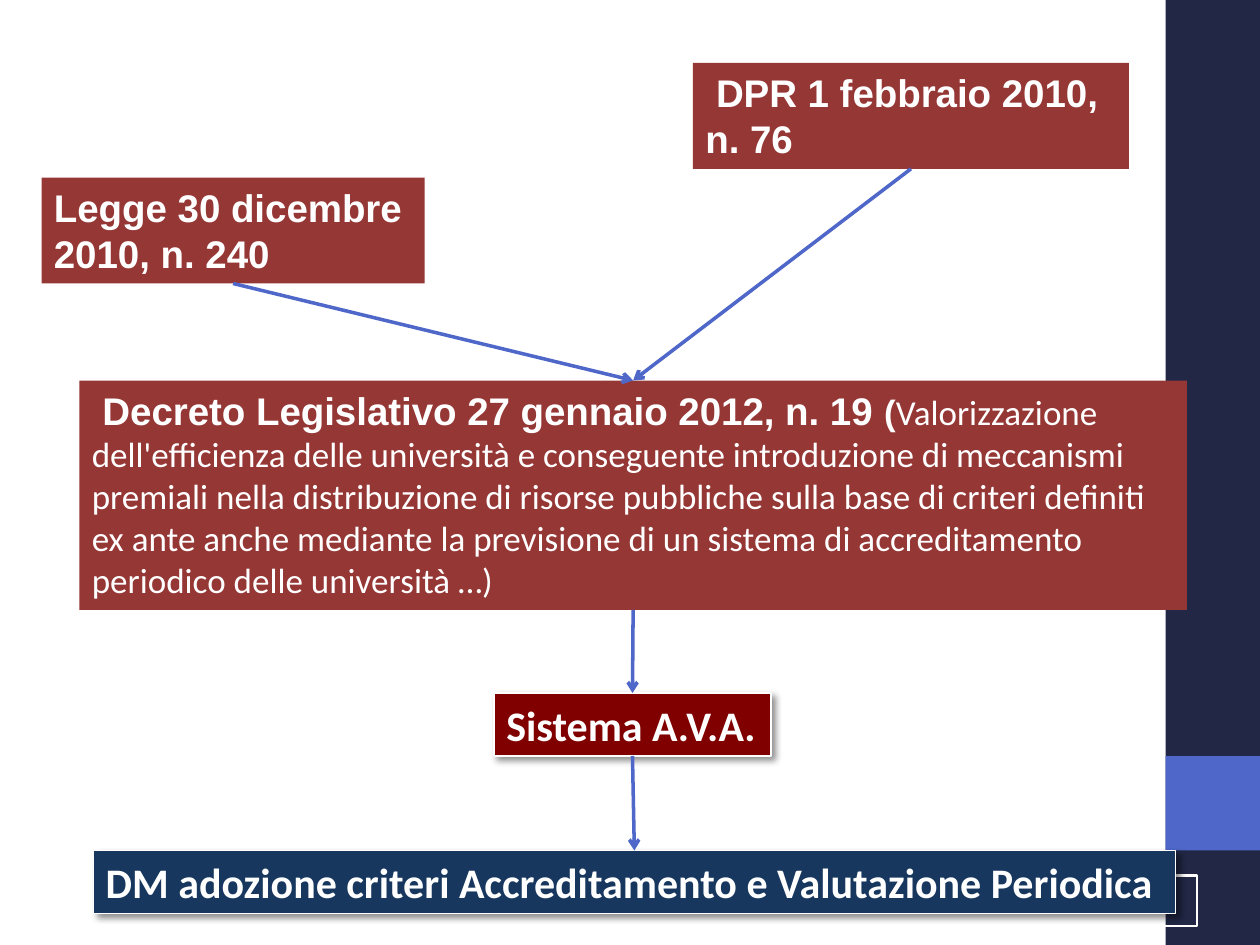
from lxml import etree
from pptx import Presentation
from pptx.dml.color import RGBColor
from pptx.enum.shapes import MSO_CONNECTOR, MSO_SHAPE
from pptx.enum.text import MSO_AUTO_SIZE as AutoSize
from pptx.oxml import parse_xml
from pptx.oxml.ns import nsdecls, qn
from pptx.util import Inches, Pt

WHITE = RGBColor(0xFF, 0xFF, 0xFF)
NAVY = RGBColor(0x21, 0x27, 0x45)
BLUE = RGBColor(0x4E, 0x67, 0xC8)
BRICK = RGBColor(0x95, 0x37, 0x35)
MAROON = RGBColor(0x80, 0x00, 0x00)
DEEP_BLUE = RGBColor(0x17, 0x37, 0x5E)

SLIDE_W, SLIDE_H = 10, 7.5
BAND_W = 0.75

# Runs are (text, font, size, bold); framed boxes have a border and a shadow
BOXES = {
    "decreto": dict(at=(0.63, 3.02, 8.79, 1.82), fill=BRICK, framed=False, runs=[
        (" Decreto Legislativo 27 gennaio 2012, n. 19 ", "Arial", 22, True),
        ("(", "Arial", 20, True),
        ("Valorizzazione dell'efficienza delle università e conseguente "
         "introduzione di meccanismi premiali nella distribuzione di risorse "
         "pubbliche sulla base di criteri definiti ex ante anche mediante la "
         "previsione di un sistema di accreditamento periodico delle "
         "università …)", "Calibri", 20, False)]),
    "sistema": dict(at=(3.92, 5.5, 2.2, 0.5), fill=MAROON, framed=True, runs=[
        ("Sistema A.V.A.", "Calibri", 24, True)]),
    "legge": dict(at=(0.33, 1.41, 3.04, 0.84), fill=BRICK, framed=False, runs=[
        ("Legge 30 dicembre 2010, n. 240", "Arial", 22, True)]),
    "dpr": dict(at=(5.5, 0.5, 3.46, 0.84), fill=BRICK, framed=False, runs=[
        (" DPR 1 febbraio 2010, n. 76", "Arial", 22, True)]),
    "dm": dict(at=(0.74, 6.75, 8.59, 0.5), fill=DEEP_BLUE, framed=True, runs=[
        ("DM adozione criteri Accreditamento e Valutazione Periodica",
         "Calibri", 24, True)]),
}
FLOW = [("dpr", "decreto"), ("legge", "decreto"),
        ("decreto", "sistema"), ("sistema", "dm")]
BOTTOM, TOP = 2, 0

SHADOW = (f'<a:effectLst {nsdecls("a")}><a:outerShdw blurRad="{Pt(4)}" '
          f'dist="{Pt(3)}" dir="2700000" algn="tl" rotWithShape="0">'
          '<a:srgbClr val="000000"><a:alpha val="43000"/></a:srgbClr>'
          '</a:outerShdw></a:effectLst>')


def add_rect(slide, at, fill=None, line=None):
    rect = slide.shapes.add_shape(MSO_SHAPE.RECTANGLE, *map(Inches, at))
    rect.shadow.inherit = False
    if fill is None:
        rect.fill.background()
    else:
        rect.fill.solid()
        rect.fill.fore_color.rgb = fill
    if line is None:
        rect.line.fill.background()
    else:
        rect.line.color.rgb = line
        rect.line.width = Pt(1.5)


def add_box(slide, at, fill, framed, runs):
    box = slide.shapes.add_textbox(*map(Inches, at))
    box.fill.solid()
    box.fill.fore_color.rgb = fill
    if framed:
        box.line.color.rgb = WHITE
        box.line.width = Pt(0.75)
        box._element.spPr.append(parse_xml(SHADOW))
    frame = box.text_frame
    frame.word_wrap = not framed
    frame.auto_size = AutoSize.SHAPE_TO_FIT_TEXT
    for text, font, size, bold in runs:
        run = frame.paragraphs[0].add_run()
        run.text = text
        run.font.name = font
        run.font.size = Pt(size)
        run.font.bold = bold
        run.font.color.rgb = WHITE
    return box


def add_arrow(slide, source, target):
    arrow = slide.shapes.add_connector(MSO_CONNECTOR.STRAIGHT, 0, 0, 0, 0)
    arrow.begin_connect(source, BOTTOM)
    arrow.end_connect(target, TOP)
    arrow.line.color.rgb = BLUE
    arrow.line.width = Pt(2)
    etree.SubElement(arrow.line._get_or_add_ln(), qn("a:tailEnd"), type="arrow")
    etree.SubElement(arrow._element.spPr, qn("a:effectLst"))


def main():
    prs = Presentation()
    prs.slide_width, prs.slide_height = Inches(SLIDE_W), Inches(SLIDE_H)
    slide = prs.slides.add_slide(prs.slide_layouts[6])

    # Side band, its accent square and the page number frame
    band_x = SLIDE_W - BAND_W
    add_rect(slide, (band_x, 0, BAND_W, SLIDE_H), fill=NAVY)
    add_rect(slide, (band_x, SLIDE_H - 2 * BAND_W, BAND_W, BAND_W), fill=BLUE)
    add_rect(slide, (7.17, 6.95, 2.33, 0.4), line=WHITE)

    # Laws and the arrows that join them
    boxes = {name: add_box(slide, **box) for name, box in BOXES.items()}
    for source, target in FLOW:
        add_arrow(slide, boxes[source], boxes[target])

    prs.save("out.pptx")


if __name__ == "__main__":
    main()
